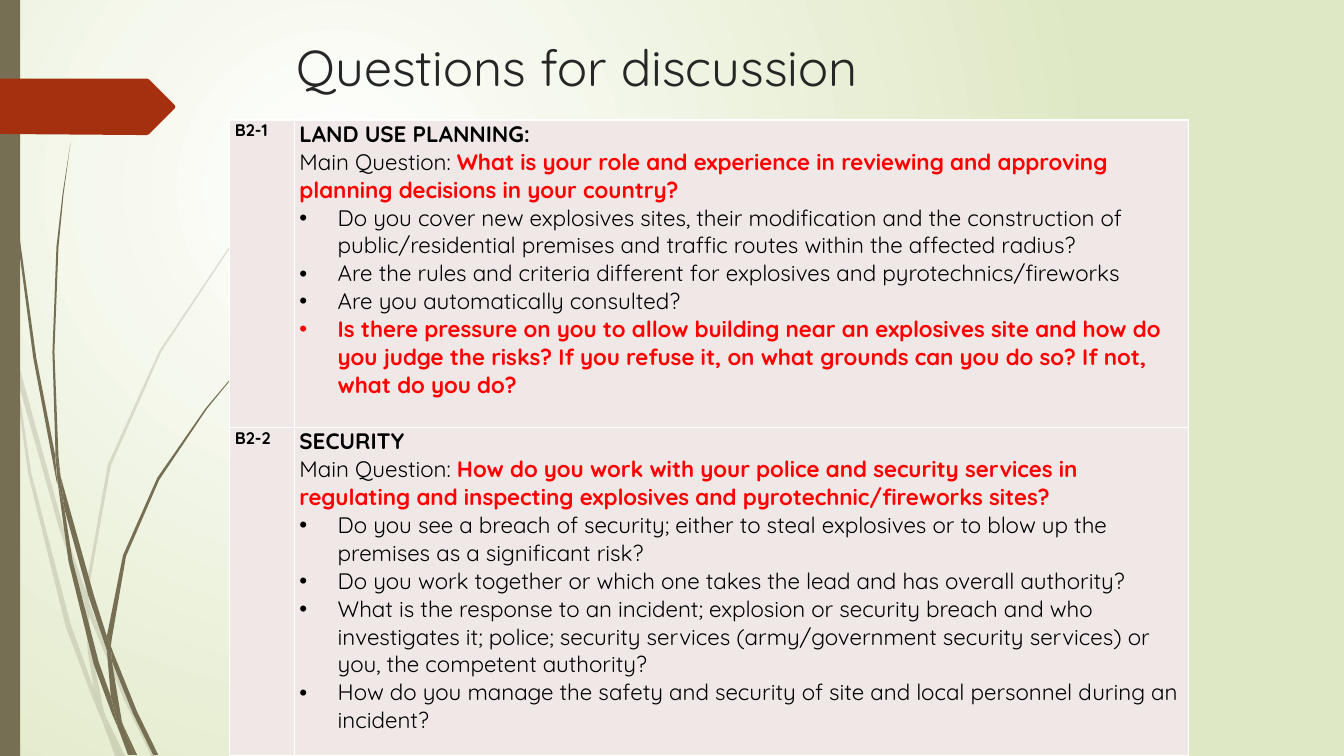
from dataclasses import dataclass

import pptx
import pptx.dml.color
import pptx.enum.shapes
import pptx.enum.text
import pptx.oxml
import pptx.oxml.ns
import pptx.util

Inches = pptx.util.Inches
FONT = "Quicksand"
COLORS = {
    "white": "FFFFFF", "meadow": "DFE8C4", "stem": "766F54", "banner": "A53010",
    "cell": "F0E8E7", "title": "262626", "text": "000000", "key": "FF0000",
}
Points = list[tuple[float, float]]


@dataclass
class Tuft:
    opacity: int
    blades: list[Points]


@dataclass
class Question:
    text: str
    key: bool = False


@dataclass
class Topic:
    code: str
    heading: str
    main_question: str
    questions: list[Question]
    height: float


PALE_TUFT = Tuft(20, [
    [(0.11, 3.5), (0.09, 3.22), (0, 2.82), (0, 2.99), (0.1, 3.44)],
    [(0.58, 5.22), (0.84, 5.99), (0.85, 5.86), (0.62, 5.2), (0.14, 3.45), (0.17, 3.76)],
    [(0.92, 6.07), (0.88, 5.96), (0.88, 6.1), (1.23, 6.94), (1.5, 7.5), (1.55, 7.5), (1.27, 6.92)],
    [(1.19, 7.5), (1.24, 7.5), (1.05, 7.11)],
    [(0.93, 6.83), (0.7, 6.19), (0.31, 4.69), (0.17, 3.76), (0.11, 3.5), (0.28, 4.7),
     (0.65, 6.21), (0.92, 6.93), (1.01, 7.14), (0.99, 7.07)],
    [(0.84, 5.99), (0.87, 6.46), (0.93, 6.83), (0.96, 6.92), (1.05, 7.11), (1.03, 7.06),
     (0.91, 6.46), (0.88, 6.1), (0.88, 6.08)],
    [(0.88, 5.84), (1.1, 4.62), (1.6, 3.49), (2.29, 2.45), (2.68, 1.98), (2.9, 1.75),
     (3.12, 1.54), (3.12, 1.53), (2.89, 1.75), (2.68, 1.97), (2.28, 2.44), (1.58, 3.48),
     (1.07, 4.61), (0.85, 5.84), (0.85, 5.86), (0.88, 5.96)],
    [(1.01, 7.14), (1.14, 7.5), (1.19, 7.5)],
    [(0.88, 6.08), (0.88, 6.1), (0.88, 5.96), (0.85, 5.86), (0.84, 5.99)],
    [(0.96, 6.92), (0.93, 6.83), (0.99, 7.07), (1.01, 7.14), (1.19, 7.5), (1.05, 7.11)],
])
DARK_TUFT = Tuft(100, [
    [(0.07, 1.1), (0.17, 2.33), (0.33, 3.55), (0.56, 4.77), (0.57, 4.81), (0.55, 4.57),
     (0.55, 4.53), (0.36, 3.55), (0.19, 2.32), (0.08, 1.09), (0.05, 0.48), (0.04, 0),
     (0.03, 0), (0.04, 0.48)],
    [(0.88, 5.92), (1.06, 6.45), (1.06, 6.33), (1.06, 6.31), (0.93, 5.9), (0.6, 4.72), (0.64, 5.05)],
    [(1.13, 6.49), (1.1, 6.41), (1.11, 6.56), (1.32, 7.08), (1.52, 7.49), (1.57, 7.49), (1.36, 7.06)],
    [(1.1, 6.91), (0.98, 6.57), (0.72, 5.56), (0.64, 5.05), (0.57, 4.77), (0.68, 5.57),
     (0.93, 6.59), (1.11, 7.08), (1.17, 7.22), (1.16, 7.17)],
    [(0.6, 4.72), (0.58, 4.53), (0.54, 3.49), (0.58, 2.45), (0.63, 1.93), (0.7, 1.41),
     (0.62, 1.93), (0.56, 2.45), (0.52, 3.49), (0.55, 4.49)],
    [(1.33, 7.49), (1.36, 7.49), (1.22, 7.19)],
    [(0.57, 4.77), (0.64, 5.05), (0.6, 4.72), (0.55, 4.49), (0.55, 4.53)],
    [(1.11, 6.33), (1.25, 5.52), (1.58, 4.76), (2.05, 4.06), (2.31, 3.74), (2.45, 3.59),
     (2.61, 3.44), (2.45, 3.58), (2.31, 3.73), (2.04, 4.05), (1.56, 4.74), (1.22, 5.51),
     (1.06, 6.31), (1.1, 6.41)],
    [(1.17, 7.22), (1.27, 7.49), (1.31, 7.49)],
    [(1.06, 6.45), (1.1, 6.91), (1.16, 7.06), (1.22, 7.19), (1.21, 7.16), (1.11, 6.56), (1.09, 6.51)],
    [(1.06, 6.45), (1.09, 6.51), (1.11, 6.56), (1.1, 6.41), (1.06, 6.31), (1.06, 6.33)],
    [(1.16, 7.06), (1.1, 6.91), (1.16, 7.17), (1.17, 7.22), (1.3, 7.49), (1.33, 7.49), (1.22, 7.19)],
])
BANNER: Points = [(0, 0.78), (1.46, 0.78), (1.48, 0.79), (1.73, 1.04), (1.74, 1.06),
                  (1.73, 1.08), (1.48, 1.33), (1.46, 1.34), (1.36, 1.34), (0, 1.33)]

TOPICS = [
    Topic("B2-1", "LAND USE PLANNING:",
          "What is your role and experience in reviewing and approving planning decisions in your country?",
          [Question("Do you cover new explosives sites, their modification and the construction of "
                    "public/residential premises and traffic routes within the affected radius?"),
           Question("Are the rules and criteria different for explosives and pyrotechnics/fireworks"),
           Question("Are you automatically consulted?"),
           Question("Is there pressure on you to allow building near an explosives site and how do you "
                    "judge the risks? If you refuse it, on what grounds can you do so? If not, what do "
                    "you do?", key=True)], 3.05),
    Topic("B2-2", "SECURITY",
          "How do you work with your police and security services in regulating and inspecting "
          "explosives and pyrotechnic/fireworks sites?",
          [Question("Do you see a breach of security; either to steal explosives or to blow up the "
                    "premises as a significant risk?"),
           Question("Do you work together or which one takes the lead and has overall authority?"),
           Question("What is the response to an incident; explosion or security breach and who "
                    "investigates it; police; security services (army/government security services) "
                    "or you, the competent authority?"),
           Question("How do you manage the safety and security of site and local personnel during "
                    "an incident?")], 3.26),
]


def rgb(name: str) -> pptx.dml.color.RGBColor:
    return pptx.dml.color.RGBColor.from_string(COLORS[name])


def xml(tag: str, attributes: str = "", content: str = ""):
    return pptx.oxml.parse_xml(
        f'<a:{tag} {pptx.oxml.ns.nsdecls("a")} {attributes}>{content}</a:{tag}>')


def write(paragraph, text: str, *, size: float = 16, color: str = "text", bold: bool = False) -> None:
    run = paragraph.add_run()
    run.text = text
    run.font.name = FONT
    run.font.size = pptx.util.Pt(size)
    run.font.bold = bold
    run.font.color.rgb = rgb(color)


def paint(shape, color: str, opacity: int = 100) -> None:
    shape.shadow.inherit = False
    shape.line.fill.background()
    shape.fill.solid()
    shape.fill.fore_color.rgb = rgb(color)
    if opacity < 100:
        tint = shape.element.spPr.find(".//" + pptx.oxml.ns.qn("a:srgbClr"))
        tint.append(xml("alpha", f'val="{opacity * 1000}"'))


def draw_outline(shapes, points: Points, color: str, opacity: int = 100) -> None:
    start, *rest = [(Inches(x), Inches(y)) for x, y in points]
    builder = shapes.build_freeform(*start)
    builder.add_line_segments(rest)
    paint(builder.convert_to_shape(), color, opacity)


def draw_background(slide) -> None:
    fill = slide.background.fill
    fill.gradient()
    for stop, color in zip(fill.gradient_stops, ("white", "meadow")):
        stop.color.rgb = rgb(color)
    gradient = slide.element.find(".//" + pptx.oxml.ns.qn("a:gradFill"))
    gradient.replace(
        gradient.find(pptx.oxml.ns.qn("a:lin")),
        xml("path", 'path="circle"', '<a:fillToRect l="50000" t="50000" r="100000" b="100000"/>'))


def format_cell(cell) -> None:
    cell.margin_left = cell.margin_right = Inches(0.05)
    cell.margin_top = cell.margin_bottom = 0
    line = f'<a:solidFill><a:srgbClr val="{COLORS["white"]}"/></a:solidFill>'
    for side in "LRTB":
        cell._tc.get_or_add_tcPr().append(xml(f"ln{side}", 'w="12700"', line))
    cell.fill.solid()
    cell.fill.fore_color.rgb = rgb("cell")


def add_bullet(paragraph) -> None:
    properties = paragraph._p.get_or_add_pPr()
    properties.set("marL", str(Inches(0.38)))
    properties.set("indent", str(Inches(-0.38)))
    properties.append(xml("buFont", 'typeface="Arial"'))
    properties.append(xml("buChar", 'char="•"'))


def fill_topic(code_cell, content_cell, topic: Topic) -> None:
    format_cell(code_cell)
    format_cell(content_cell)
    write(code_cell.text_frame.paragraphs[0], topic.code, size=12, bold=True)
    content = content_cell.text_frame
    write(content.paragraphs[0], topic.heading, bold=True)
    main = content.add_paragraph()
    write(main, "Main Question: ")
    write(main, topic.main_question, color="key", bold=True)
    for question in topic.questions:
        paragraph = content.add_paragraph()
        add_bullet(paragraph)
        write(paragraph, question.text, color="key" if question.key else "text", bold=question.key)


def main() -> None:
    deck = pptx.Presentation()
    deck.slide_width, deck.slide_height = Inches(13.33), Inches(7.5)
    slide = deck.slides.add_slide(deck.slide_layouts.get_by_name("Title Only"))
    draw_background(slide)
    for tuft in (PALE_TUFT, DARK_TUFT):
        group = slide.shapes.add_group_shape()
        for blade in tuft.blades:
            draw_outline(group.shapes, blade, "stem", tuft.opacity)
    sidebar = slide.shapes.add_shape(
        pptx.enum.shapes.MSO_SHAPE.RECTANGLE, 0, 0, Inches(0.2), deck.slide_height)
    paint(sidebar, "stem")
    draw_outline(slide.shapes, BANNER, "banner")

    title = slide.shapes.title
    title.left, title.top, title.width, title.height = map(Inches, (2.84, 0.31, 9.75, 0.73))
    title.text_frame.auto_size = pptx.enum.text.MSO_AUTO_SIZE.NONE
    title.text_frame.vertical_anchor = pptx.enum.text.MSO_ANCHOR.TOP
    heading = title.text_frame.paragraphs[0]
    heading.alignment = pptx.enum.text.PP_ALIGN.LEFT
    write(heading, "Questions for discussion", size=36, color="title")

    height = sum(topic.height for topic in TOPICS)
    table = slide.shapes.add_table(
        len(TOPICS), 2, Inches(2.28), Inches(1.19), Inches(9.51), Inches(height)).table
    table.first_row = table.horz_banding = False
    for column, width in zip(table.columns, (0.64, 8.87)):
        column.width = Inches(width)
    for row, topic in zip(table.rows, TOPICS):
        row.height = Inches(topic.height)
        fill_topic(*row.cells, topic)
    deck.save("out.pptx")


if __name__ == "__main__":
    main()
